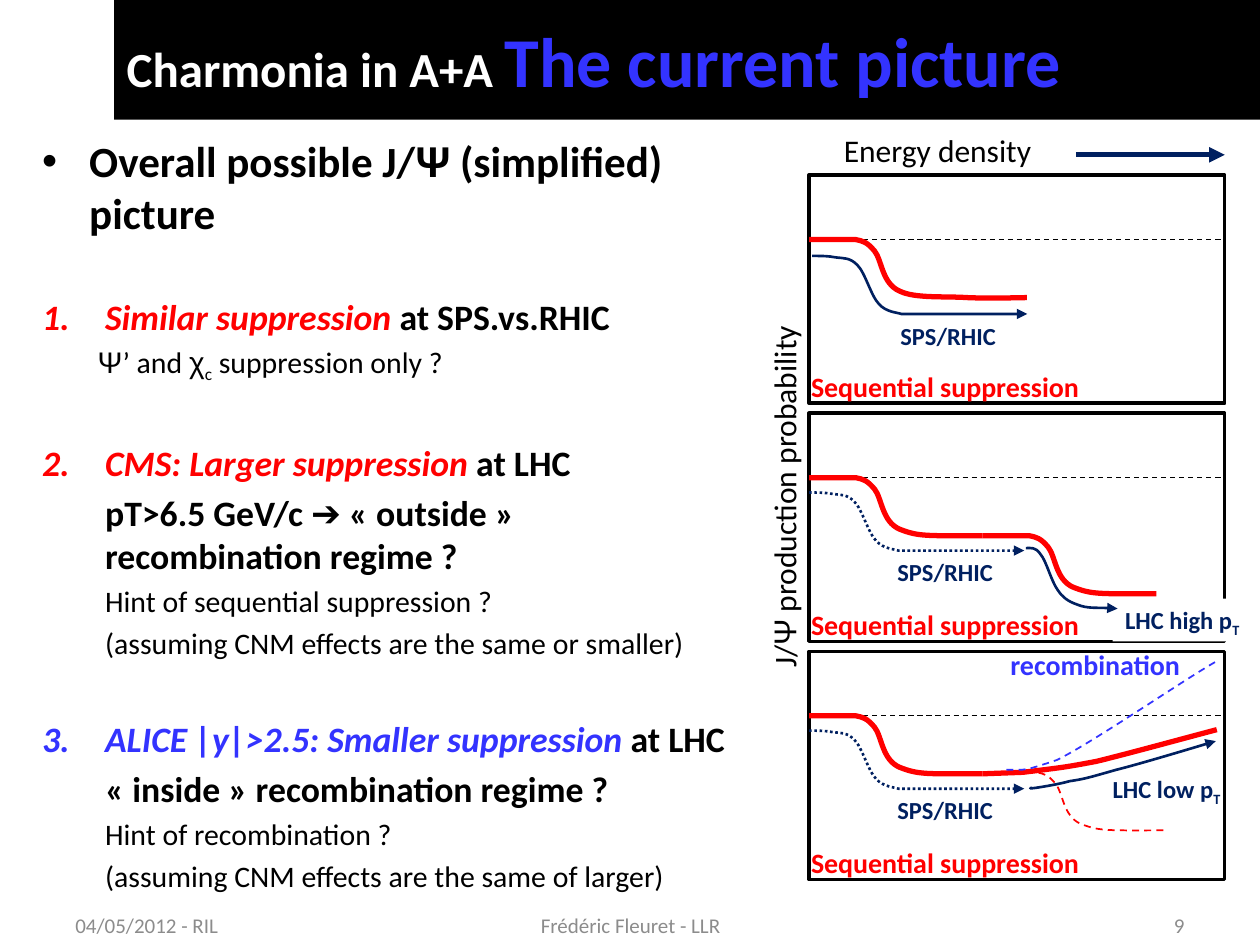
from dataclasses import dataclass

from lxml.etree import SubElement
from pptx import Presentation
from pptx.dml.color import RGBColor
from pptx.enum.dml import MSO_LINE
from pptx.enum.shapes import MSO_CONNECTOR, MSO_SHAPE
from pptx.enum.text import MSO_ANCHOR, PP_ALIGN
from pptx.oxml.ns import qn
from pptx.util import Cm, Pt


@dataclass(frozen=True)
class Theme:
    """Colours, fonts and type sizes of the slide."""
    black: str = "000000"
    white: str = "FFFFFF"
    red: str = "FF0000"
    blue: str = "3333FF"
    navy: str = "002060"
    grey: str = "8C8C8C"
    font: str = "Calibri"
    greek: str = "Arial"
    title: float = 40
    topic: float = 28
    lead: float = 24.6
    heading: float = 20.4
    detail: float = 17
    axis: float = 18
    process: float = 16
    label: float = 14
    footer: float = 12


THEME = Theme()
PANEL_LEFT, PANEL_TOP, PANEL_WIDTH, PANEL_HEIGHT, PANEL_PITCH = 16.31, 3.53, 8.38, 4.6, 4.8
REFERENCE = 1.3
DROP = [(0, 0), (0.94, 0), (1.09, 0.03, 1.17, 0.05, 1.32, 0.23),
        (1.47, 0.41, 1.47, 0.89, 1.83, 1.04), (2.21, 1.19, 2.36, 1.17, 3.5, 1.17)]
LONG_DROP = DROP[:4] + [(2.13, 1.19, 2.74, 1.14, 3.18, 1.17), (3.6, 1.19, 4.35, 1.17, 4.39, 1.17)]
SPS_GUIDE = [(0, 0), (0.2, 0, 0.33, 0, 0.48, 0.03), (0.64, 0.05, 0.76, 0.03, 0.91, 0.18),
             (1.07, 0.33, 1.19, 0.81, 1.35, 0.97), (1.5, 1.14, 1.73, 1.14, 1.8, 1.17), (4.34, 1.17)]
HIGH_GUIDE = [(0, 0), (0.1, 0, 0.2, -0.03, 0.3, 0.13), (0.41, 0.25, 0.51, 0.66, 0.64, 0.84),
              (0.74, 0.99, 0.84, 1.07, 1.04, 1.14), (1.24, 1.22, 1.52, 1.19, 1.85, 1.22)]
LOW_GUIDE = [(0, 0), (-0.18, 0.05, 0.48, -0.05, 0.76, -0.13),
             (1.07, -0.18, 1.07, -0.18, 1.7, -0.36), (2.11, -0.46, 3.28, -0.81, 3.71, -0.94)]
RISE = [(0, 0), (0.81, -0.03), (1.63, -0.13, 1.65, -0.13, 2.29, -0.25),
        (2.95, -0.41, 4.22, -0.76, 4.72, -0.89)]
RECOMBINATION = [(0, 0), (0.3, 0), (0.41, -0.03, 0.28, 0.05, 1.02, -0.2),
                 (1.75, -0.56, 3.63, -1.85, 4.22, -2.18)]


def add_span(para, text, size, color=THEME.black, bold=False, italic=False, font=THEME.font, sub=False):
    """Append one formatted run to a paragraph."""
    span = para.add_run()
    span.text = text
    span.font.name, span.font.size = font, Pt(size)
    span.font.bold, span.font.italic = bold, italic
    span.font.color.rgb = RGBColor.from_string(color)
    if sub:
        span._r.get_or_add_rPr().set("baseline", "-25000")


def add_box(page, left, top, width, height, wrap=False, anchor=MSO_ANCHOR.TOP):
    """Add an empty text box and return it."""
    box = page.shapes.add_textbox(Cm(left), Cm(top), Cm(width), Cm(height))
    box.text_frame.word_wrap = wrap
    box.text_frame.vertical_anchor = anchor
    return box


def add_label(page, left, top, width, height, text, size, color, bold=True, sub=""):
    """Add a one-line label with an optional subscript."""
    box = add_box(page, left, top, width, height)
    para = box.text_frame.paragraphs[0]
    add_span(para, text, size, color, bold)
    if sub:
        add_span(para, sub, size, color, bold, sub=True)
    return box


def fill_solid(shape, color):
    """Give a shape a plain fill."""
    shape.fill.solid()
    shape.fill.fore_color.rgb = RGBColor.from_string(color)


def style_line(shape, color, width, dash=None, arrow=False):
    """Set the stroke of a line or outline."""
    shape.line.color.rgb = RGBColor.from_string(color)
    shape.line.width = Pt(width)
    if dash:
        shape.line.dash_style = dash
    if arrow:
        SubElement(shape.line._get_or_add_ln(), qn("a:tailEnd"), type="triangle")


def add_line(page, start, end, **stroke):
    """Add a straight connector without a shadow."""
    line = page.shapes.add_connector(MSO_CONNECTOR.STRAIGHT, *map(Cm, start + end))
    style_line(line, **stroke)
    SubElement(line._element.spPr, qn("a:effectLst"))


def bend(shape, curve, left, top):
    """Turn the straight segments of a freeform into its cubic ones."""
    lines = list(shape._element.iter(qn("a:lnTo")))
    for line, segment in zip(lines, curve[1:]):
        if len(segment) == 6:
            cubic = line.makeelement(qn("a:cubicBezTo"))
            for dx, dy in zip(segment[::2], segment[1::2]):
                SubElement(cubic, qn("a:pt"), x=str(Cm(left + dx) - shape.left), y=str(Cm(top + dy) - shape.top))
            line.getparent().replace(line, cubic)


def add_curve(page, panel, x, y, curve, color=THEME.red, width=3, **stroke):
    """Draw a curve at an offset inside a numbered panel."""
    left, top = PANEL_LEFT + x, PANEL_TOP + panel * PANEL_PITCH + y
    points = [(Cm(left + node[-2]), Cm(top + node[-1])) for node in curve]
    builder = page.shapes.build_freeform(*points[0])
    builder.add_line_segments(points[1:], close=False)
    shape = builder.convert_to_shape()
    bend(shape, curve, left, top)
    shape.shadow.inherit = False
    shape.fill.background()
    style_line(shape, color, width, **stroke)


def add_panel(page, panel):
    """Draw a panel with its reference line, first drop and guide arrow."""
    top = PANEL_TOP + panel * PANEL_PITCH
    frame = page.shapes.add_shape(MSO_SHAPE.RECTANGLE, Cm(PANEL_LEFT), Cm(top), Cm(PANEL_WIDTH), Cm(PANEL_HEIGHT))
    frame.shadow.inherit = False
    fill_solid(frame, THEME.white)
    style_line(frame, THEME.black, 2)
    level = top + REFERENCE
    add_line(page, (PANEL_LEFT, level), (PANEL_LEFT + PANEL_WIDTH, level),
             color=THEME.black, width=0.75, dash=MSO_LINE.DASH)
    first = panel == 0
    shift = 0.06 if first else 0
    add_curve(page, panel, 0, REFERENCE, LONG_DROP if first else DROP)
    add_curve(page, panel, shift, 1.6 + shift / 2, SPS_GUIDE, THEME.navy, 1.5,
              dash=None if first else MSO_LINE.ROUND_DOT, arrow=True)
    add_label(page, 17.84 + shift, top + 2.78 + shift / 2, 2.62, 0.86, "SPS/RHIC", THEME.label, THEME.navy)
    add_label(page, 16.1, top + 3.79, 5.99, 0.94, "Sequential suppression", THEME.process, THEME.red)


def add_title(page):
    """Place and fill the title placeholder."""
    title = page.shapes.title
    title.left, title.top, title.width, title.height = Cm(2.3), Cm(0), Cm(23.1), Cm(2.41)
    fill_solid(title, THEME.black)
    title.text_frame.vertical_anchor = MSO_ANCHOR.MIDDLE
    para = title.text_frame.paragraphs[0]
    para.alignment = PP_ALIGN.LEFT
    add_span(para, "Charmonia in A+A \t", THEME.topic, THEME.white, True)
    add_span(para, "The current picture", THEME.title, THEME.blue, True)


def add_para(frame, before=0, left=1.27, hang=0, bullet=None, **marker):
    """Add a paragraph with its indent, spacing and optional marker."""
    para = frame.add_paragraph() if frame.paragraphs[0].runs else frame.paragraphs[0]
    props = para._p.get_or_add_pPr()
    props.set("marL", str(Cm(left)))
    props.set("indent", str(-Cm(hang)))
    if bullet:
        SubElement(props, qn("a:buFont"), typeface=THEME.greek if bullet == "a:buChar" else THEME.font)
        SubElement(props, qn(bullet), **marker)
    para.space_before = Pt(before)
    return para


def add_heading(frame, number, claim, color, place):
    """Add a numbered finding."""
    para = add_para(frame, 32.5, hang=1.27, bullet="a:buAutoNum", type="arabicPeriod", startAt=str(number))
    add_span(para, claim, THEME.heading, color, True, True)
    add_span(para, place, THEME.heading, bold=True)


def add_remarks(frame, regime, *details):
    """Add the bold regime line and its plain details."""
    add_span(add_para(frame, 4.1), regime, THEME.heading, bold=True)
    for detail in details:
        add_span(add_para(frame, 3.4), detail, THEME.detail)


def add_findings(page):
    """Fill the text column on the left."""
    frame = add_box(page, 0.6, 2.59, 14.5, 15.29, wrap=True).text_frame
    lead = add_para(frame, left=0.95, hang=0.95, bullet="a:buChar", char="•")
    for text, font in (("Overall possible J/", THEME.font), ("Ψ", THEME.greek), (" (simplified) picture", THEME.font)):
        add_span(lead, text, THEME.lead, bold=True, font=font)
    add_heading(frame, 1, "Similar suppression ", THEME.red, "at SPS.vs.RHIC")
    states = add_para(frame, 3.4, left=1.12)
    add_span(states, "Ψ", THEME.detail, font=THEME.greek)
    add_span(states, "’ and ", THEME.detail)
    add_span(states, "χ", THEME.detail, font=THEME.greek)
    add_span(states, "c", THEME.detail, sub=True)
    add_span(states, " suppression only ?", THEME.detail)
    add_heading(frame, 2, "CMS: Larger suppression ", THEME.red, "at LHC")
    add_remarks(frame, "pT>6.5 GeV/c ➔ « outside » recombination regime ?",
                "Hint of sequential suppression ?", "(assuming CNM effects are the same or smaller)")
    add_heading(frame, 3, "ALICE |y|>2.5: Smaller suppression ", THEME.blue, "at LHC")
    add_remarks(frame, "« inside » recombination regime ?",
                "Hint of recombination ?", "(assuming CNM effects are the same of larger)")


def add_axes(page):
    """Label the shared axes of the panels."""
    add_line(page, (21.69, 3.12), (24.69, 3.12), color=THEME.navy, width=3, arrow=True)
    add_label(page, 16.76, 2.51, 4.34, 1.02, "Energy density", THEME.axis, THEME.black, False)
    box = add_box(page, 12.07, 9.47, 7.47, 1.02)
    box.rotation = 270
    para = box.text_frame.paragraphs[0]
    for text, font in (("J/", THEME.font), ("Ψ", THEME.greek), (" production probability", THEME.font)):
        add_span(para, text, THEME.axis, font=font)


def add_footer(page):
    """Add the date, author and page number."""
    for left, width, text, align in ((1.27, 5.92, "04/05/2012 - RIL", PP_ALIGN.LEFT),
                                     (8.69, 8.05, "Frédéric Fleuret - LLR", PP_ALIGN.CENTER),
                                     (18.21, 5.92, "9", PP_ALIGN.RIGHT)):
        box = add_box(page, left, 18.39, width, 0.53, wrap=True, anchor=MSO_ANCHOR.MIDDLE)
        para = box.text_frame.paragraphs[0]
        para.alignment = align
        add_span(para, text, THEME.footer, THEME.grey)


def main():
    """Build and save the slide."""
    deck = Presentation()
    deck.slide_width, deck.slide_height = Cm(25.4), Cm(19.05)
    page = deck.slides.add_slide(deck.slide_layouts[5])
    add_title(page)
    add_findings(page)
    for panel in range(3):
        add_panel(page, panel)
    add_curve(page, 1, 3.5, 2.47, DROP)
    high = add_label(page, 22.43, 12.07, 2.84, 0.86, "LHC high p", THEME.label, THEME.navy, sub="T")
    fill_solid(high, THEME.white)
    add_curve(page, 1, 4.37, 2.72, HIGH_GUIDE, THEME.navy, 1.5, arrow=True)
    add_curve(page, 2, 3.5, 2.47, RISE)
    add_curve(page, 2, 3.98, 2.39, RECOMBINATION, THEME.blue, 1, dash=MSO_LINE.DASH)
    add_curve(page, 2, 4.49, 2.75, LOW_GUIDE, THEME.navy, 1.5, arrow=True)
    add_curve(page, 2, 3.65, 2.44, DROP, width=1, dash=MSO_LINE.DASH)
    add_label(page, 22.18, 15.47, 2.72, 0.86, "LHC low p", THEME.label, THEME.navy, sub="T")
    add_label(page, 20.12, 12.93, 3.99, 0.94, "recombination", THEME.process, THEME.blue)
    add_axes(page)
    add_footer(page)
    deck.save("out.pptx")


if __name__ == "__main__":
    main()
